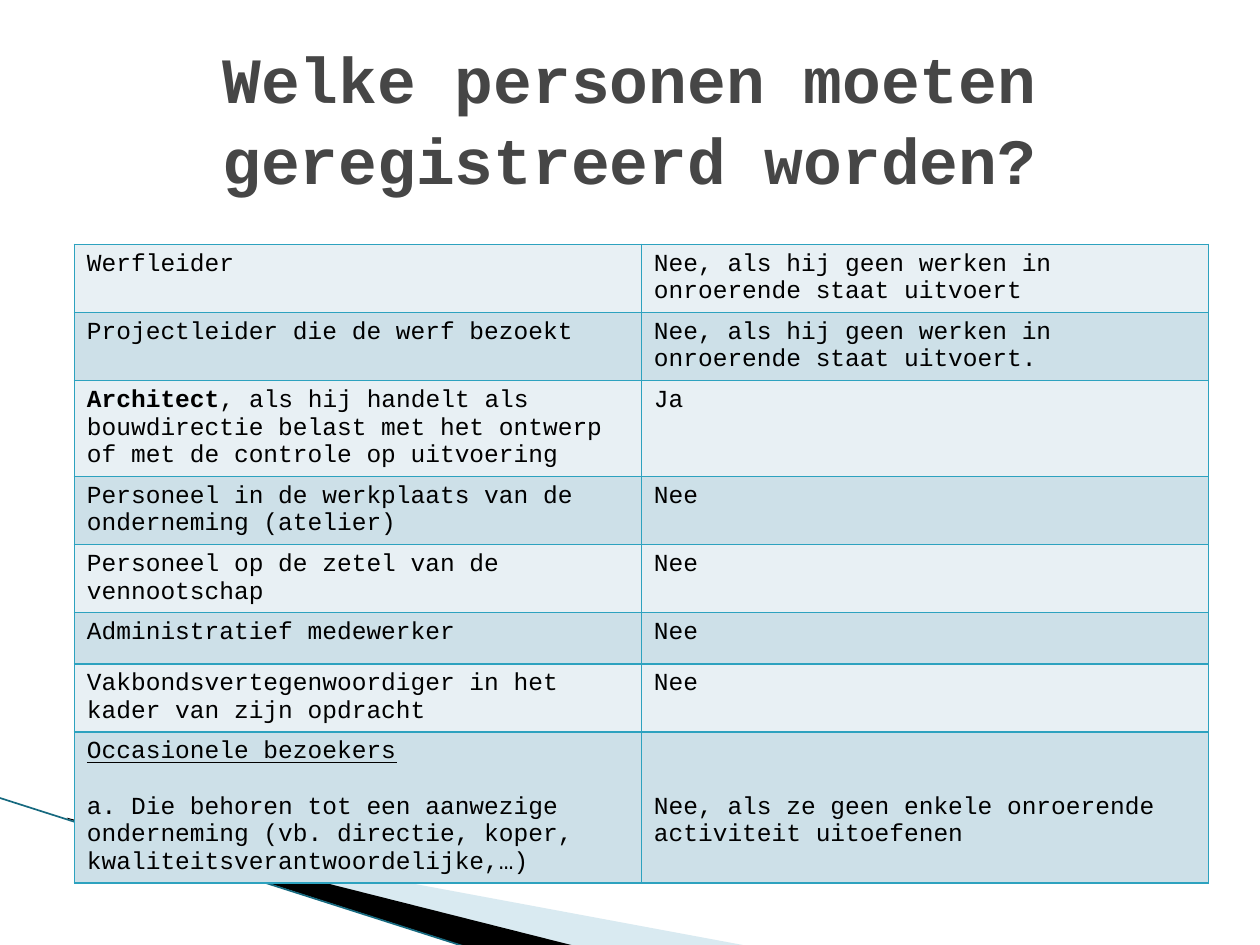
from dataclasses import dataclass

from lxml import etree
from pptx import Presentation
from pptx.dml.color import RGBColor
from pptx.enum.shapes import MSO_CONNECTOR
from pptx.enum.text import MSO_ANCHOR, MSO_AUTO_SIZE, PP_ALIGN
from pptx.oxml.ns import qn
from pptx.util import Pt

CENTER = PP_ALIGN.CENTER
MIDDLE = MSO_ANCHOR.MIDDLE
NO_AUTOFIT = MSO_AUTO_SIZE.NONE
STRAIGHT = MSO_CONNECTOR.STRAIGHT

TITLE_GRAY = RGBColor(0x46, 0x46, 0x46)
BLACK = RGBColor(0x00, 0x00, 0x00)
PALE_BLUE = RGBColor(0xA0, 0xCB, 0xDC)
DARK_TEAL = RGBColor(0x16, 0x69, 0x7F)
BORDER_TEAL = RGBColor(0x2D, 0xA2, 0xBF)
BANDS = (RGBColor(0xE8, 0xF0, 0xF4), RGBColor(0xCD, 0xE0, 0xE8))

FONT = "Courier New"
TITLE_FORMAT = {"name": FONT, "size": Pt(36.9), "bold": True}
CELL_FORMAT = {"name": FONT, "size": Pt(14)}
TEXT_LINE = 15.85  # height of one line of cell text
CELL_MARGIN = 3.6
ROW_HEIGHT = 29.2
COLUMN_WIDTH = 324


@dataclass(frozen=True)
class Run:
    text: str
    bold: bool = False
    underline: bool = False


@dataclass(frozen=True)
class Person:
    description: tuple[tuple[Run, ...], ...]  # paragraphs of runs
    answer: str
    answer_offset: float = 0


@dataclass(frozen=True)
class Wedge:
    points: tuple[tuple[float, float], ...]
    color: RGBColor
    opacity: int = 100


def plain(text: str) -> tuple[tuple[Run, ...], ...]:
    return ((Run(text),),)


PERSONS = (
    Person(plain("Werfleider"),
           "Nee, als hij geen werken in onroerende staat uitvoert"),
    Person(plain("Projectleider die de werf bezoekt"),
           "Nee, als hij geen werken in onroerende staat uitvoert."),
    Person(((Run("Architect", bold=True),
             Run(", als hij handelt als bouwdirectie belast met het ontwerp "
                 "of met de controle op uitvoering")),), "Ja"),
    Person(plain("Personeel in de werkplaats van de onderneming (atelier)"), "Nee"),
    Person(plain("Personeel op de zetel van de vennootschap"), "Nee"),
    Person(plain("Administratief medewerker"), "Nee"),
    Person(plain("Vakbondsvertegenwoordiger in het kader van zijn opdracht"), "Nee"),
    Person(((Run("Occasionele bezoekers", underline=True),),
            (Run("a. Die behoren tot een aanwezige onderneming (vb. directie, "
                 "koper, kwaliteitsverantwoordelijke,…)"),)),
           "Nee, als ze geen enkele onroerende activiteit uitoefenen",
           answer_offset=2 * TEXT_LINE),
)

WEDGES = (
    Wedge(((39.6, 468.4), (428.4, 540.7), (328.3, 540.7)), PALE_BLUE, 40),
    Wedge(((38.2, 467.3), (329, 540.7), (267.8, 541.4), (38.9, 468)), BLACK),
)


def apply_format(font, values: dict, color: RGBColor) -> None:
    for attribute, value in values.items():
        setattr(font, attribute, value)
    font.color.rgb = color


def draw_wedge(shapes, wedge: Wedge) -> None:
    corners = [(Pt(x), Pt(y)) for x, y in wedge.points]
    builder = shapes.build_freeform(*corners[0], scale=1.0)
    builder.add_line_segments(corners[1:], close=True)
    shape = builder.convert_to_shape()
    shape.shadow.inherit = False
    shape.fill.solid()
    shape.fill.fore_color.rgb = wedge.color
    shape.line.fill.background()
    if wedge.opacity < 100:
        color = shape.fill._xPr.find(f"{qn('a:solidFill')}/{qn('a:srgbClr')}")
        etree.SubElement(color, qn("a:alpha"), val=str(wedge.opacity * 1000))


def add_borders(cell) -> None:
    properties = cell._tc.get_or_add_tcPr()
    for side in ("a:lnL", "a:lnR", "a:lnT", "a:lnB"):
        border = etree.SubElement(properties, qn(side), w=str(Pt(1)))
        fill = etree.SubElement(border, qn("a:solidFill"))
        etree.SubElement(fill, qn("a:srgbClr"), val=str(BORDER_TEAL))


def fill_cell(cell, paragraphs: tuple[tuple[Run, ...], ...],
              band: RGBColor, offset: float = 0) -> None:
    add_borders(cell)
    cell.fill.solid()
    cell.fill.fore_color.rgb = band
    cell.margin_top = Pt(CELL_MARGIN + offset)
    frame = cell.text_frame
    for index, runs in enumerate(paragraphs):
        paragraph = frame.add_paragraph() if index else frame.paragraphs[0]
        if index:
            paragraph.space_before = Pt(TEXT_LINE)
        for part in runs:
            run = paragraph.add_run()
            run.text = part.text
            emphasis = {"bold": part.bold, "underline": part.underline}
            apply_format(run.font, CELL_FORMAT | emphasis, BLACK)


def draw_table(shapes, persons: tuple[Person, ...]) -> None:
    table = shapes.add_table(len(persons), 2, Pt(42.5), Pt(139.7),
                             Pt(2 * COLUMN_WIDTH),
                             Pt(len(persons) * ROW_HEIGHT)).table
    table.first_row = False
    table.horz_banding = False
    for index, person in enumerate(persons):
        band = BANDS[index % 2]
        fill_cell(table.cell(index, 0), person.description, band)
        fill_cell(table.cell(index, 1), plain(person.answer), band,
                  person.answer_offset)


def draw_title(title, text: str) -> None:
    title.left, title.top, title.width, title.height = (
        Pt(36), Pt(21.6), Pt(648), Pt(90))
    frame = title.text_frame
    frame.text = text
    frame.word_wrap = True
    frame.auto_size = NO_AUTOFIT
    frame.vertical_anchor = MIDDLE
    heading = frame.paragraphs[0]
    heading.alignment = CENTER
    heading.line_spacing = 1.05
    apply_format(heading.runs[0].font, TITLE_FORMAT, TITLE_GRAY)


def main() -> None:
    presentation = Presentation()
    presentation.slide_width, presentation.slide_height = Pt(720), Pt(540)
    slide = presentation.slides.add_slide(presentation.slide_layouts[5])
    shapes = slide.shapes

    # Decoration in the lower left corner
    for wedge in WEDGES:
        draw_wedge(shapes, wedge)
    edge = shapes.add_connector(STRAIGHT, Pt(-0.7), Pt(455.8), Pt(267.1), Pt(541.4))
    edge.line.color.rgb = DARK_TEAL
    edge.line.width = Pt(0.95)
    etree.SubElement(edge._element.spPr, qn("a:effectLst"))

    # Who has to be registered
    draw_table(shapes, PERSONS)
    draw_title(shapes.title, "Welke personen moeten geregistreerd worden?")

    presentation.save("out.pptx")


if __name__ == "__main__":
    main()
